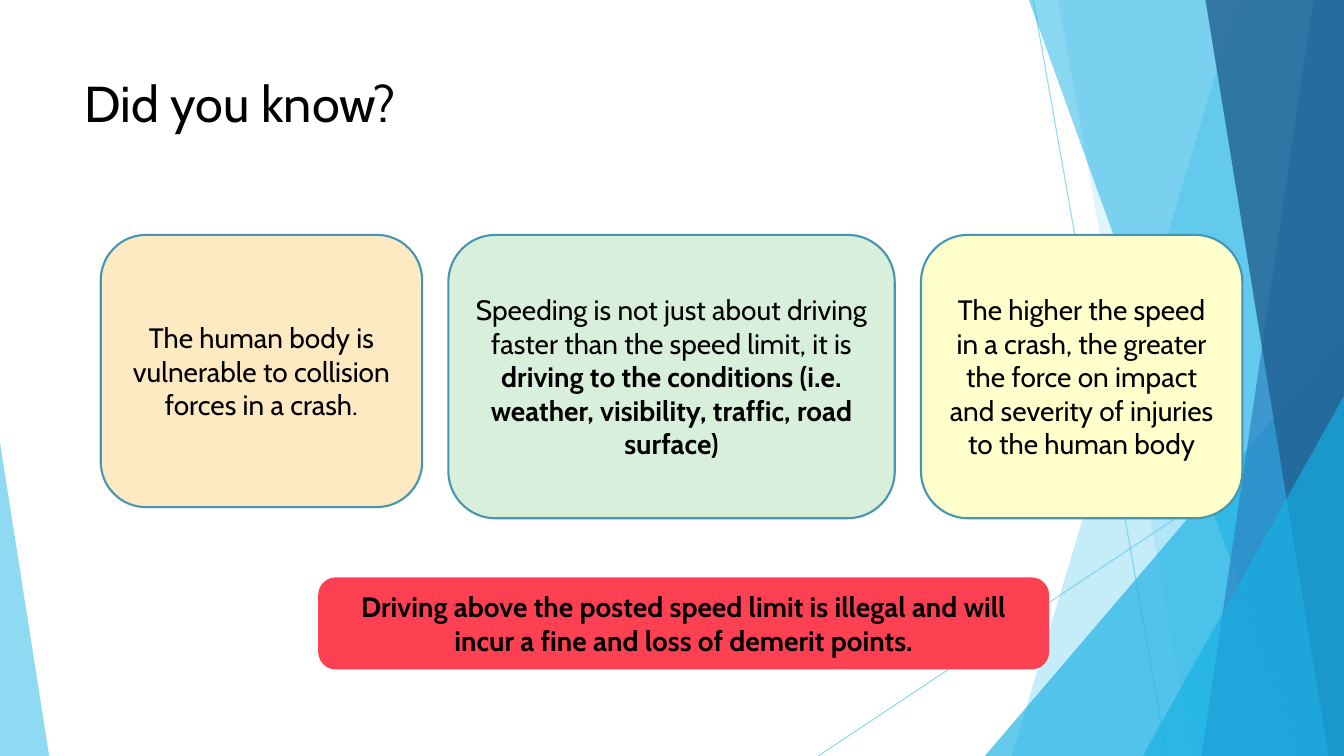
from lxml import etree
from pptx import Presentation
from pptx.dml.color import RGBColor
from pptx.enum.shapes import MSO_CONNECTOR, MSO_SHAPE
from pptx.enum.text import MSO_ANCHOR, PP_ALIGN
from pptx.oxml.ns import qn
from pptx.util import Cm, Pt

STRAIGHT = MSO_CONNECTOR.STRAIGHT
TRIANGLE = MSO_SHAPE.RIGHT_TRIANGLE
TRIANGLE = MSO_SHAPE.ISOSCELES_TRIANGLE
ROUNDED = MSO_SHAPE.ROUNDED_RECTANGLE
TOP, MIDDLE = MSO_ANCHOR.TOP, MSO_ANCHOR.MIDDLE
LEFT, CENTER = PP_ALIGN.LEFT, PP_ALIGN.CENTER
WIDTH, HEIGHT = 33.87, 19.05
FONT = "Cabin"
SKY, AZURE = "5FCBEF", "17B0E4"
CARD_TOP, CARD_GAP = 5.92, 0.66


def paint(color_format, hex_color, shape=None, opacity=100):
    color_format.rgb = RGBColor.from_string(hex_color)
    if shape is not None:
        for color in shape._element.spPr.iter(qn("a:srgbClr")):
            etree.SubElement(color, qn("a:alpha"), val=str(opacity * 1000))


def format_text(frame, size, alignment, anchor):
    frame.word_wrap = True
    frame.vertical_anchor = anchor
    paragraph = frame.paragraphs[0]
    paragraph.alignment = alignment
    for run in paragraph.runs:
        run.font.name = FONT
        run.font.size = Pt(size)
        paint(run.font.color, "000000")


prs = Presentation()
prs.slide_width, prs.slide_height = Cm(WIDTH), Cm(HEIGHT)
slide = prs.slides.add_slide(prs.slide_layouts[5])
shapes = slide.shapes

for start_x, start_y, end_x in [(26.04, 0, 29.41), (WIDTH, 10.24, 20.62)]:
    ray = shapes.add_connector(STRAIGHT, Cm(start_x), Cm(start_y), Cm(end_x), Cm(HEIGHT))
    ray.line.width = Pt(0.75)
    paint(ray.line.color, SKY, ray, 70)
    etree.SubElement(ray._element.spPr, qn("a:effectLst"))

facets = [
    (31.19, 25.5, 0, SKY, 36),
    (26.67, 30.05, 0, SKY, 20),
    (24.82, WIDTH, 8.46, AZURE, 66),
    (25.93, 32.79, 0, AZURE, 50),
    (33.1, 30.28, 0, "2E83C3", 70),
    (30.38, 33.48, 0, "226292", 80),
    (28.8, WIDTH, 9.98, AZURE, 66),
    (0, 1.24, 11.15, SKY, 70),
]
for first_x, second_x, top, color, opacity in facets:
    if top:
        facet = shapes.add_shape(
            TRIANGLE, Cm(first_x), Cm(top), Cm(second_x - first_x), Cm(HEIGHT - top))
        facet.adjustments[0] = 1 if second_x == WIDTH else 0
    else:
        outline = shapes.build_freeform(Cm(first_x), 0, scale=1.0)
        outline.add_line_segments(
            [(Cm(WIDTH), 0), (Cm(WIDTH), Cm(HEIGHT)), (Cm(second_x), Cm(HEIGHT))])
        facet = outline.convert_to_shape()
    facet.shadow.inherit = False
    facet.line.fill.background()
    facet.fill.solid()
    paint(facet.fill.fore_color, color, facet, opacity)

title = shapes.title
title.left, title.top, title.width, title.height = Cm(1.88), Cm(1.7), Cm(23.88), Cm(3.66)
title.text_frame.text = "Did you know?"
format_text(title.text_frame, 36, LEFT, TOP)

body_card = (8.1, 6.86, "FEEAC2", "The human body is vulnerable to collision forces in a crash.", "")
speeding_card = (
    11.25, 7.14, "D8F0DB",
    "Speeding is not just about driving faster than the speed limit, it is ",
    "driving to the conditions (i.e. weather, visibility, traffic, road surface)")
force_card = (
    8.1, 7.14, "FFFFCC",
    "The higher the speed in a crash, the greater the force on impact "
    "and severity of injuries to the human body", "")
warning = "Driving above the posted speed limit is illegal and will incur a fine and loss of demerit points."

panels = []
card_left = 2.54
for width, height, fill, plain, bold in [body_card, speeding_card, force_card]:
    panels.append((card_left, CARD_TOP, width, height, fill, "4696B1", 1.5, plain, bold))
    card_left += width + CARD_GAP
panels.append((8.1, 14.63, 18.26, 2.16, "FD4153", "FD4153", 4.5, "", warning))

for left, top, width, height, fill, border, border_width, plain, bold in panels:
    panel = shapes.add_shape(ROUNDED, Cm(left), Cm(top), Cm(width), Cm(height))
    panel.shadow.inherit = False
    panel.fill.solid()
    paint(panel.fill.fore_color, fill)
    paint(panel.line.color, border)
    panel.line.width = Pt(border_width)
    paragraph = panel.text_frame.paragraphs[0]
    for wording, is_bold in [(plain, False), (bold, True)]:
        if wording:
            run = paragraph.add_run()
            run.text = wording
            run.font.bold = is_bold
    format_text(panel.text_frame, 20, CENTER, MIDDLE)

prs.save("out.pptx")
